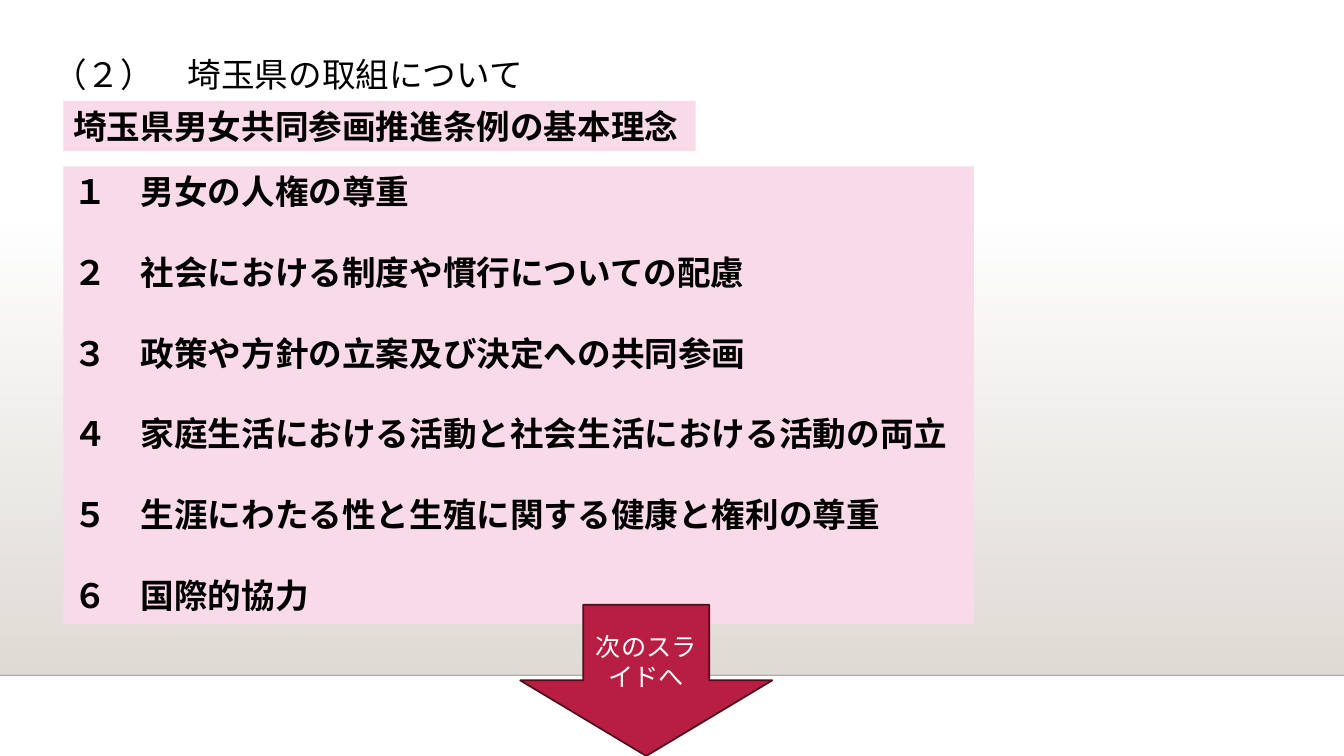
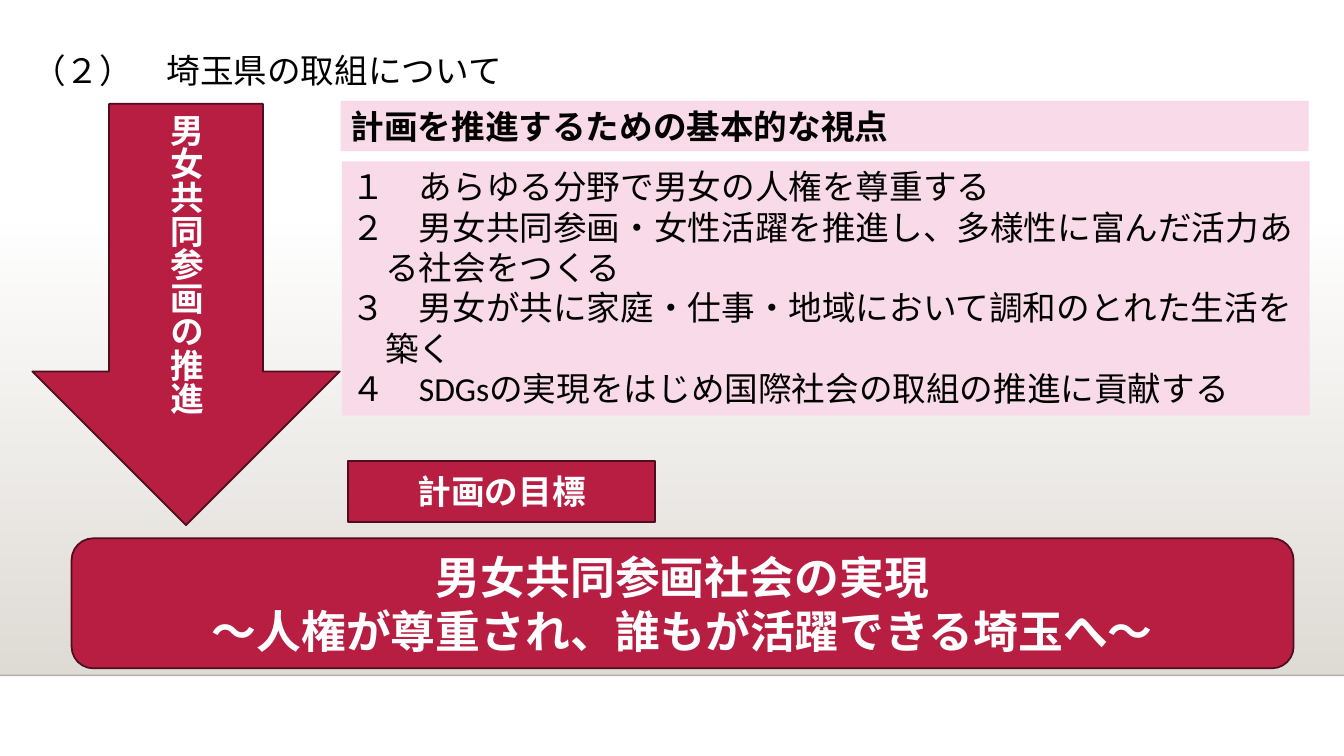
from dataclasses import dataclass

from lxml import etree
from pptx import Presentation
from pptx.dml.color import RGBColor
from pptx.enum.shapes import MSO_CONNECTOR, MSO_SHAPE as SHAPE
from pptx.enum.text import MSO_ANCHOR as ANCHOR, PP_ALIGN as ALIGN
from pptx.oxml.ns import qn
from pptx.util import Inches, Pt


@dataclass(frozen=True)
class Theme:
    black: RGBColor = RGBColor(0, 0, 0)
    white: RGBColor = RGBColor(255, 255, 255)
    pink: RGBColor = RGBColor(0xF8, 0xDA, 0xE8)
    crimson: RGBColor = RGBColor(0xB7, 0x1E, 0x42)
    outline: RGBColor = RGBColor(0x50, 0x0D, 0x1D)
    floor: RGBColor = RGBColor(0xDF, 0xDB, 0xD5)
    heading_font: str = "Noto Sans CJK JP"
    body_font: str = "Calibri"
    small: int = 18
    normal: int = 24
    large: int = 32
    line_ratio: float = 1.2


T = Theme()
TITLE = "（２）　埼玉県の取組について"
PRINCIPLES = [
    "１　男女の人権の尊重",
    "２　社会における制度や慣行についての配慮",
    "３　政策や方針の立案及び決定への共同参画",
    "４　家庭生活における活動と社会生活における活動の両立",
    "５　生涯にわたる性と生殖に関する健康と権利の尊重",
    "６　国際的協力",
]
VIEWPOINTS = [
    "１　あらゆる分野で男女の人権を尊重する",
    "２　男女共同参画・女性活躍を推進し、多様性に富んだ活力あ\vる社会をつくる",
    "３　男女が共に家庭・仕事・地域において調和のとれた生活を\v築く",
    "４　SDGsの実現をはじめ国際社会の取組の推進に貢献する",
]
GOAL = ["男女共同参画社会の実現", "～人権が尊重され、誰もが活躍できる埼玉へ～"]


# Helpers
def set_alpha(color_el, percent):
    alpha = etree.SubElement(color_el, qn("a:alpha"))
    alpha.set("val", str(percent * 1000))


def set_text(sp, lines, color, size=T.normal, bold=False, font=T.body_font,
             align=ALIGN.LEFT, anchor=ANCHOR.TOP, gap=0, hang=0):
    tf = sp.text_frame
    tf.word_wrap = True
    tf.vertical_anchor = anchor
    tf.text = "\n".join(lines)
    for i, p in enumerate(tf.paragraphs):
        p.alignment = align
        p.line_spacing = Pt(size * T.line_ratio)
        if i and gap:
            p.space_before = Pt(gap)
        if hang:
            pPr = p._p.get_or_add_pPr()
            pPr.set("marL", str(Pt(hang)))
            pPr.set("indent", str(-Pt(hang)))
        for r in p.runs:
            r.font.name = font
            r.font.size = Pt(size)
            r.font.bold = bold
            r.font.color.rgb = color
            ea = etree.Element(qn("a:ea"), typeface=font)
            r.font._element.find(qn("a:latin")).addnext(ea)


def add_block(s, kind, box, fill, line=None):
    sp = s.shapes.add_shape(kind, *map(Inches, box))
    sp.shadow.inherit = False
    sp.fill.solid()
    sp.fill.fore_color.rgb = fill
    if line is None:
        sp.line.fill.background()
    else:
        sp.line.color.rgb = line
        sp.line.width = Pt(1.25)
    return sp


def add_panel(s, box, lines, **style):
    sp = add_block(s, SHAPE.RECTANGLE, box, T.pink)
    set_text(sp, lines, T.black, **style)


def add_accent(s, kind, box, lines, **style):
    sp = add_block(s, kind, box, T.crimson, T.outline)
    set_text(sp, lines, T.white, align=ALIGN.CENTER, anchor=ANCHOR.MIDDLE, **style)
    return sp


# Shared backdrop and title
def add_backdrop(s):
    sp = s.shapes.add_shape(SHAPE.RECTANGLE, 0, Inches(2.21), Inches(13.33), Inches(4.49))
    sp.shadow.inherit = False
    sp.line.fill.background()
    sp.fill.gradient()
    sp.fill.gradient_angle = 270
    for stop, position in zip(sp.fill.gradient_stops, (0, 1)):
        stop.color.rgb = T.floor
        stop.position = position
    set_alpha(next(sp._element.spPr.iter(qn("a:srgbClr"))), 0)

    edge = s.shapes.add_connector(MSO_CONNECTOR.STRAIGHT, 0, Inches(6.7),
                                  Inches(13.33), Inches(6.7))
    edge.line.color.rgb = T.black
    edge.line.width = Pt(1)
    spPr = edge._element.spPr
    set_alpha(next(spPr.iter(qn("a:srgbClr"))), 20)
    etree.SubElement(spPr, qn("a:effectLst"))


def new_slide(prs, title_left, title_top):
    s = prs.slides.add_slide(prs.slide_layouts[6])
    add_backdrop(s)
    sp = s.shapes.add_textbox(Inches(title_left), Inches(title_top),
                              Inches(6.67), Inches(0.5))
    set_text(sp, [TITLE], T.black, font=T.heading_font)
    return s


# Slides
def build_principles(prs):
    s = new_slide(prs, 0.43, 0.49)
    add_panel(s, (0.63, 1, 6.27, 0.5), ["埼玉県男女共同参画推進条例の基本理念"],
              bold=True, font=T.heading_font)
    add_panel(s, (0.63, 1.65, 9.03, 4.54), PRINCIPLES, bold=True,
              gap=T.normal * T.line_ratio)
    add_accent(s, SHAPE.DOWN_ARROW, (5.16, 6, 2.5, 1.5), ["次のスライドへ"], size=T.small)


def build_viewpoints(prs):
    s = new_slide(prs, 0.22, 0.45)
    add_panel(s, (3.38, 1, 9.6, 0.5), ["計画を推進するための基本的な視点"],
              bold=True, font=T.heading_font)
    arrow = add_accent(s, SHAPE.DOWN_ARROW, (0.32, 1.03, 3.05, 4.18),
                       ["男女共同参画の推進"], bold=True)
    arrow.text_frame._txBody.bodyPr.set("vert", "eaVert")
    add_panel(s, (3.39, 1.6, 9.6, 2.52), VIEWPOINTS, hang=T.normal)
    add_accent(s, SHAPE.ROUNDED_RECTANGLE, (0.71, 5.34, 12.12, 1.29), GOAL,
               size=T.large, bold=True)
    add_accent(s, SHAPE.RECTANGLE, (3.45, 4.57, 3.05, 0.61), ["計画の目標"], bold=True)


def main():
    prs = Presentation()
    prs.slide_width, prs.slide_height = Inches(13.33), Inches(7.5)
    build_principles(prs)
    build_viewpoints(prs)
    prs.save("out.pptx")


if __name__ == "__main__":
    main()
